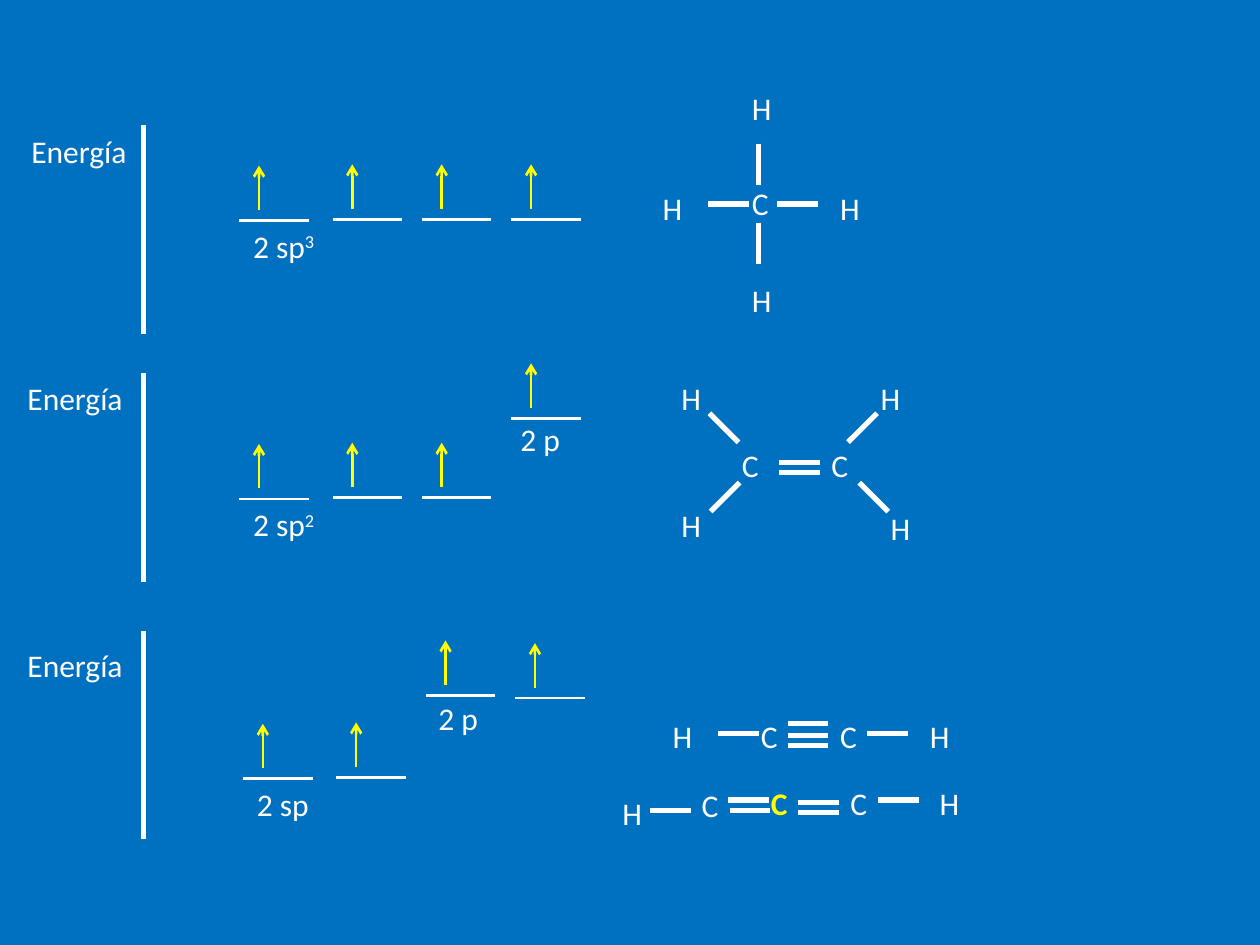
from dataclasses import dataclass

from lxml import etree
from pptx import Presentation
from pptx.dml.color import RGBColor
from pptx.enum.shapes import MSO_CONNECTOR
from pptx.enum.text import MSO_AUTO_SIZE
from pptx.oxml.ns import qn
from pptx.util import Pt

STRAIGHT = MSO_CONNECTOR.STRAIGHT
FIT_SHAPE = MSO_AUTO_SIZE.SHAPE_TO_FIT_TEXT


@dataclass(frozen=True)
class Theme:
    background: RGBColor = RGBColor(0x00, 0x70, 0xC0)
    ink: RGBColor = RGBColor(0xFF, 0xFF, 0xFF)
    accent: RGBColor = RGBColor(0xFF, 0xFF, 0x00)
    font: str = "Calibri"
    size: float = 18
    thin: float = 1.5
    thick: float = 3


THEME = Theme()
BOND = 23.4
DIAG = 16.6
ORBITAL_OFFSETS = (0, 53.3, 104.4, 155.5)
ORBITAL_WIDTH = 39.6
ATOM_SIZE = (28.1, 29.5)
LABEL_HEIGHT = 29.1

AXES = [(71.3, 190.8), (213.1, 332.6), (360.7, 479.5)]
ORBITAL_ROWS = [
    (136.8, (126, 125.3, 125.3, 125.3)),
    (136.8, (285.1, 284.4, 284.4, 239)),
    (139, (445, 444.2, 397.4, 398.9)),
]
LABELS = [
    ("Energía", "", 10.8, 72, 69.8),
    ("Energía", "", 8.6, 213.1, 69.8),
    ("Energía", "", 8.6, 365.8, 69.8),
    ("2 sp", "3", 137.5, 126, 51.1),
    ("2 sp", "2", 137.5, 285.1, 51.1),
    ("2 p", "", 290.2, 236.2, 37.4),
    ("2 sp", "", 139.7, 445, 44.6),
    ("2 p", "", 243.4, 396, 37.4),
]

METHANE = (
    [("C", 422.6, 101.5), ("H", 473, 104.4), ("H", 371.5, 104.4),
     ("H", 422.6, 157), ("H", 422.6, 47.5)],
    [(433.4, 82.1, 0, BOND), (433.4, 127.4, 0, BOND),
     (444.2, 116.6, BOND, 0), (404.6, 116.6, BOND, 0)],
)
ETHYLENE = (
    [("C", 416.9, 251.3), ("C", 468, 251.3), ("H", 382.3, 213.1),
     ("H", 382.3, 285.8), ("H", 496.1, 213.1), ("H", 501.8, 287.3)],
    [(445, 264.2, BOND, 0), (445, 270, BOND, 0),
     (484.6, 252.7, DIAG, -DIAG), (406.1, 292.3, DIAG, -DIAG),
     (491, 275.8, DIAG, DIAG), (405.4, 236.2, DIAG, DIAG)],
)
ACETYLENE = (
    [("H", 377.3, 406.1), ("C", 427.7, 406.1),
     ("C", 473, 406.1), ("H", 524.2, 406.1)],
    [(410.4, 419, BOND, 0), (450, 413.3, BOND, 0), (450, 420.5, BOND, 0),
     (450, 426.2, BOND, 0), (495.4, 419, BOND, 0)],
)
ALLENE = (
    [("H", 348.5, 450), ("C", 393.8, 445.7),
     ("C", 478.8, 444.2), ("H", 529.9, 444.2)],
    [(371.5, 463, BOND, 0), (416.2, 457.2, BOND, 0), (416.9, 463, BOND, 0),
     (455.8, 458.6, BOND, 0), (455.8, 464.4, BOND, 0), (501.8, 457.2, BOND, 0)],
)
CENTRAL_CARBON = ("C", 433.4, 444.2)


def add_line(s, x, y, dx, dy, color=THEME.ink, width=THEME.thick, arrow=False):
    line = s.shapes.add_connector(STRAIGHT, Pt(x), Pt(y), Pt(x + dx), Pt(y + dy))
    line.line.color.rgb = color
    line.line.width = Pt(width)
    if arrow:
        etree.SubElement(line.line._get_or_add_ln(), qn("a:tailEnd"), type="arrow")
    etree.SubElement(line._element.spPr, qn("a:effectLst"))


def add_text(s, text, x, y, w, h, wrap=False, color=THEME.ink, bold=False):
    sp = s.shapes.add_textbox(Pt(x), Pt(y), Pt(w), Pt(h))
    tf = sp.text_frame
    tf.text = text
    tf.word_wrap = wrap
    tf.auto_size = FIT_SHAPE
    r = tf.paragraphs[0].runs[0]
    format_run(r, color, bold)
    return tf.paragraphs[0]


def format_run(r, color=THEME.ink, bold=False):
    r.font.name = THEME.font
    r.font.size = Pt(THEME.size)
    r.font.color.rgb = color
    r.font.bold = bold


def add_label(s, text, superscript, x, y, w):
    p = add_text(s, text, x, y, w, LABEL_HEIGHT)
    if superscript:
        r = p.add_run()
        r.text = superscript
        format_run(r)
        r.font._element.set("baseline", "30000")


def add_orbital(s, x, y):
    add_line(s, x, y, ORBITAL_WIDTH, 0, width=THEME.thin)
    add_line(s, x + 11.2, y - 6, 0, -25.4, THEME.accent, THEME.thin, arrow=True)


def add_atom(s, symbol, x, y, **style):
    add_text(s, symbol, x, y, *ATOM_SIZE, wrap=True, **style)


def add_molecule(s, atoms, bonds):
    for bond in bonds:
        add_line(s, *bond)
    for atom in atoms:
        add_atom(s, *atom)


def main():
    prs = Presentation()
    prs.slide_width, prs.slide_height = Pt(720), Pt(540)
    s = prs.slides.add_slide(prs.slide_layouts[6])
    s.background.fill.solid()
    s.background.fill.fore_color.rgb = THEME.background

    for top, bottom in AXES:
        add_line(s, 82.1, top, 0, bottom - top)
    for left, levels in ORBITAL_ROWS:
        for offset, y in zip(ORBITAL_OFFSETS, levels):
            add_orbital(s, left + offset, y)
    for label in LABELS:
        add_label(s, *label)
    for atoms, bonds in (METHANE, ETHYLENE, ACETYLENE, ALLENE):
        add_molecule(s, atoms, bonds)
    add_atom(s, *CENTRAL_CARBON, color=THEME.accent, bold=True)

    prs.save("out.pptx")


if __name__ == "__main__":
    main()
